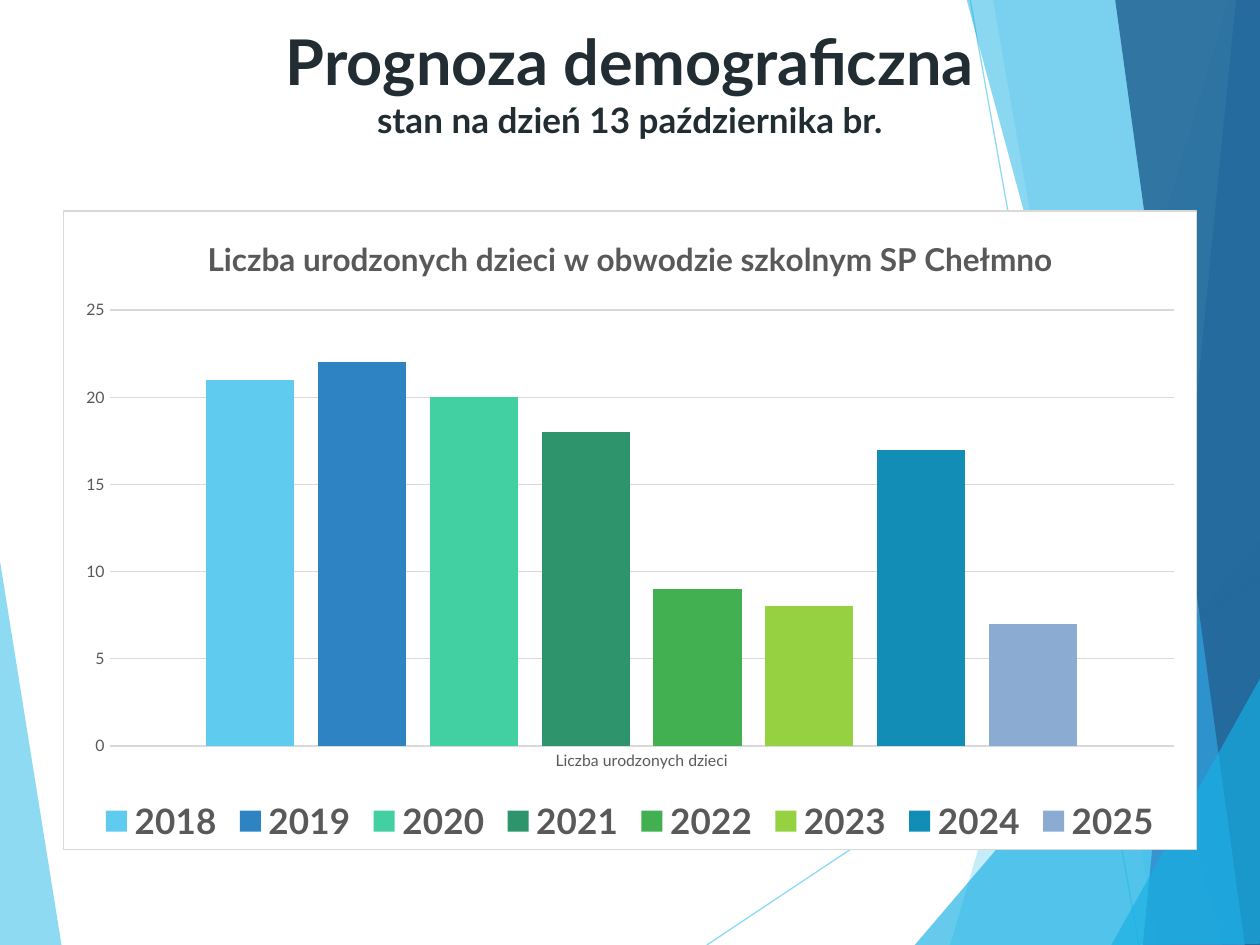
"""Build the demographic forecast slide with a column chart of births per year."""
from lxml import etree
from pptx import Presentation
from pptx.chart.data import CategoryChartData
from pptx.dml.color import RGBColor
from pptx.enum.chart import XL_CHART_TYPE as ChartType, XL_LEGEND_POSITION as LegendPosition
from pptx.enum.chart import XL_TICK_MARK as TickMark
from pptx.enum.shapes import MSO_CONNECTOR as Connector
from pptx.enum.text import MSO_ANCHOR as Anchor, PP_ALIGN as Align
from pptx.oxml import parse_xml
from pptx.oxml.ns import nsdecls, qn
from pptx.util import Inches, Pt

FONT = "Lato"
COLORS = {
    "sky": "5FCBEF", "cyan": "17B0E4", "blue": "2E83C3", "navy": "226292",
    "ink": "212D32", "label": "595959", "rule": "D9D9D9", "white": "FFFFFF",
}
BIRTHS = [
    ("2018", 21, "5FCBEF"), ("2019", 22, "2E83C3"), ("2020", 20, "42D0A2"),
    ("2021", 18, "2E946B"), ("2022", 9, "42B051"), ("2023", 8, "96D141"),
    ("2024", 17, "128DB6"), ("2025", 7, "8BABD3"),
]
RAYS = [((5.61, 7.5), (10.01, 4.57)), ((7.7, 0), (9.04, 7.5))]
FACETS = [
    ("sky", 70, [(-0.01, 4.39), (0.49, 7.51), (-0.01, 7.5)]),
    ("sky", 36, [(9.75, 0), (7.54, 7.5), (10.02, 7.51), (10.01, 0.01)]),
    ("sky", 20, [(7.88, -0.01), (9.19, 7.5), (10.01, 7.5), (10.01, -0.01)]),
    ("cyan", 66, [(7.26, 7.5), (10, 4.29), (10.01, 7.5)]),
    ("cyan", 50, [(7.67, -0.01), (9.7, 7.5), (10.01, 7.49), (10.01, -0.01)]),
    ("blue", 70, [(9.81, -0.01), (9.07, 7.5), (10.01, 7.5), (10, -0.01)]),
    ("navy", 82, [(8.85, -0.01), (9.88, 7.5), (10.02, 7.5), (10, -0.01)]),
    ("cyan", 66, [(8.82, 7.5), (10.02, 5.35), (10.02, 7.49)]),
]


def set_font(font, size, color, bold=False):
    font.name, font.size, font.bold = FONT, Pt(size), bold
    font.color.rgb = RGBColor.from_string(COLORS[color])


def set_color(fill, color, opacity=100):
    fill.solid()
    fill.fore_color.rgb = RGBColor.from_string(COLORS.get(color, color))
    if opacity < 100:
        srgb = next(fill._xPr.iter(qn("a:srgbClr")))
        etree.SubElement(srgb, qn("a:alpha")).set("val", str(opacity * 1000))


deck = Presentation()
deck.slide_width, deck.slide_height = Inches(10), Inches(7.5)
slide = deck.slides.add_slide(deck.slide_layouts[6])

for start, end in RAYS:
    ray = slide.shapes.add_connector(Connector.STRAIGHT, *map(Inches, start + end))
    ray.line.width = Pt(0.75)
    set_color(ray.line.fill, "sky", 70)
    etree.SubElement(ray._element.spPr, qn("a:effectLst"))

for color, opacity, corners in FACETS:
    points = [(Inches(x), Inches(y)) for x, y in corners]
    outline = slide.shapes.build_freeform(*points[0])
    outline.add_line_segments(points[1:], close=True)
    facet = outline.convert_to_shape()
    facet.shadow.inherit = False
    set_color(facet.fill, color, opacity)
    facet.line.fill.background()

heading = slide.shapes.add_textbox(Inches(0.75), Inches(0.13), Inches(8.5), Inches(1.34)).text_frame
heading.word_wrap = True
heading.vertical_anchor = Anchor.TOP
heading_lines = heading.paragraphs[0]
heading_lines.alignment = Align.CENTER
main_line = heading_lines.add_run()
main_line.text = "Prognoza demograficzna"
set_font(main_line.font, 36, "ink", True)
heading_lines.add_line_break()
date_line = heading_lines.add_run()
date_line.text = "stan na dzień 13 października br."
set_font(date_line.font, 20, "ink", True)

births_data = CategoryChartData()
births_data.categories = ["Liczba urodzonych dzieci"]
for year, births, _ in BIRTHS:
    births_data.add_series(year, [births])
chart = slide.shapes.add_chart(
    ChartType.COLUMN_CLUSTERED, Inches(0.5), Inches(1.67), Inches(9), Inches(5.08), births_data
).chart
set_font(chart.font, 10, "label")
chart._chartSpace.find(qn("c:chart")).addnext(parse_xml(
    f'<c:spPr {nsdecls("c", "a")}>'
    f'<a:solidFill><a:srgbClr val="{COLORS["white"]}"/></a:solidFill>'
    f'<a:ln w="{Pt(0.75)}"><a:solidFill><a:srgbClr val="{COLORS["rule"]}"/></a:solidFill></a:ln>'
    '</c:spPr>'
))

chart.has_title = True
chart_title = chart.chart_title.text_frame.paragraphs[0].add_run()
chart_title.text = "Liczba urodzonych dzieci w obwodzie szkolnym SP Chełmno"
set_font(chart_title.font, 18, "label", True)
chart.chart_title.include_in_layout = False

chart.has_legend = True
chart.legend.position = LegendPosition.BOTTOM
chart.legend.include_in_layout = False
set_font(chart.legend.font, 20, "label", True)

for axis in (chart.category_axis, chart.value_axis):
    axis.major_tick_mark = axis.minor_tick_mark = TickMark.NONE
    set_font(axis.tick_labels.font, 9, "label")
value_axis = chart.value_axis
value_axis.minimum_scale, value_axis.maximum_scale, value_axis.major_unit = 0, 25, 5
value_axis.format.line.fill.background()
value_axis.has_major_gridlines = True
for rule in (chart.category_axis.format.line, value_axis.major_gridlines.format.line):
    rule.width = Pt(0.75)
    set_color(rule.fill, "rule")

plot = chart.plots[0]
plot.vary_by_categories = False
plot.gap_width, plot.overlap = 219, -27
for column, (_, _, color) in zip(plot.series, BIRTHS):
    column.invert_if_negative = False
    set_color(column.format.fill, color)

deck.save("out.pptx")
